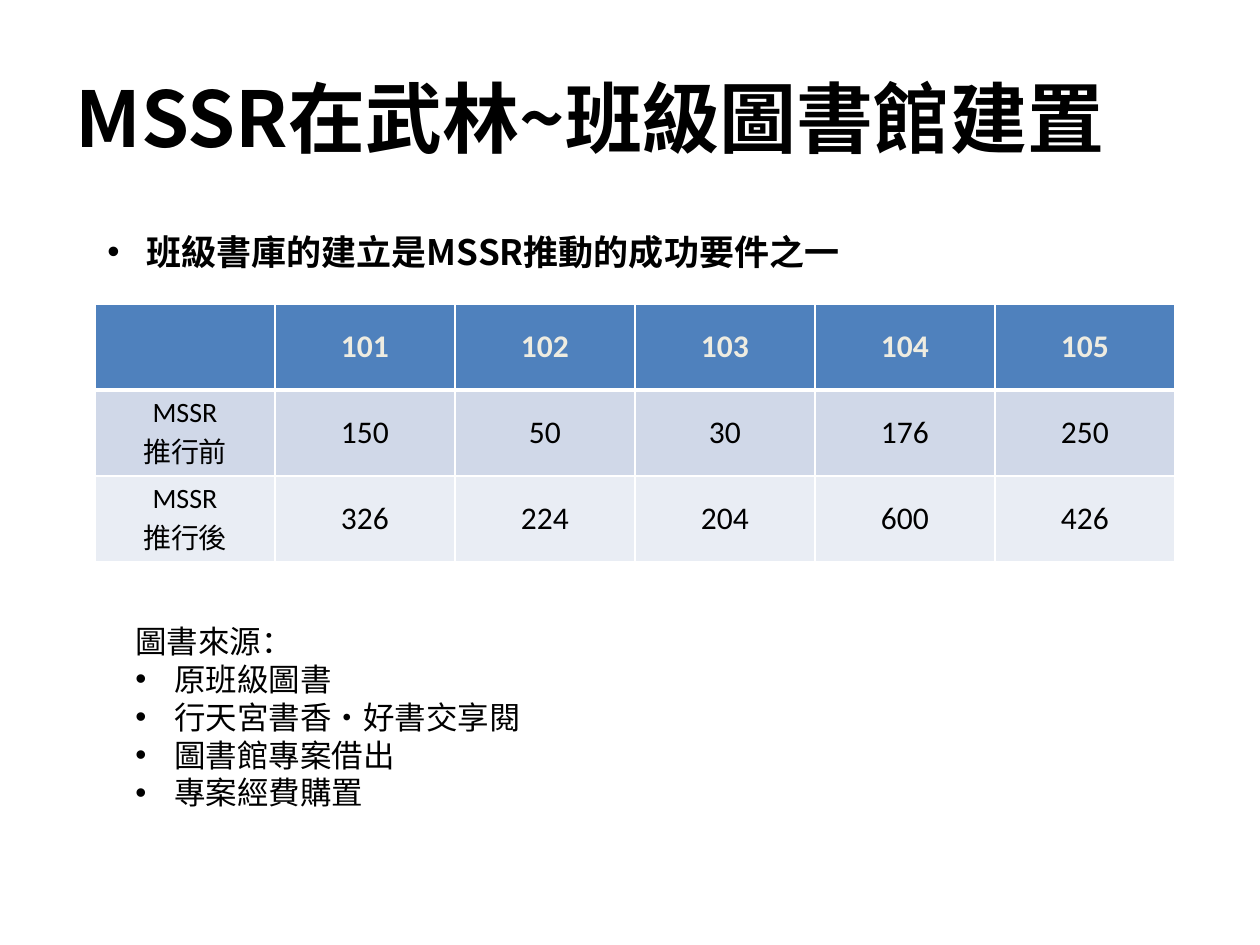
from lxml.etree import SubElement
from pptx import Presentation
from pptx.dml.color import RGBColor
from pptx.enum.text import MSO_ANCHOR, MSO_AUTO_SIZE, PP_ALIGN
from pptx.oxml import parse_xml
from pptx.oxml.ns import nsdecls, qn
from pptx.util import Emu, Pt

COLORS = {
    "ink": "000000",
    "cream": "EEECE1",
    "head": "4F81BD",
    "odd": "D0D8E8",
    "even": "E9EDF4",
    "rule": "FFFFFF",
}
SANS = "Noto Sans CJK SC"
LATIN = "Calibri"
INDENT = 39


def px(n):
    return Emu(round(n * 914400 / 126))


def style(run, size, name=SANS, bold=False, color="ink"):
    font = run.font
    font.size = Pt(size)
    font.bold = bold
    font.name = name
    font.color.rgb = RGBColor.from_string(COLORS[color])
    SubElement(font._element, qn("a:ea")).set("typeface", name)


def bullet(para):
    props = para._p.get_or_add_pPr()
    props.set("marL", str(px(INDENT)))
    props.set("indent", str(-px(INDENT)))
    SubElement(props, qn("a:buFont")).set("typeface", "Arial")
    SubElement(props, qn("a:buChar")).set("char", "•")


def add_text(slide, box, lines, size, bold=False, plain=0, grow=True):
    frame = slide.shapes.add_textbox(*map(px, box)).text_frame
    frame.word_wrap = True
    if grow:
        frame.auto_size = MSO_AUTO_SIZE.SHAPE_TO_FIT_TEXT
    else:
        frame.vertical_anchor = MSO_ANCHOR.MIDDLE
    frame.text = "\n".join(lines)
    for i, para in enumerate(frame.paragraphs):
        if i >= plain:
            bullet(para)
        for run in para.runs:
            style(run, size, bold=bold)


def add_rules(cell, top, base):
    props = cell._tc.get_or_add_tcPr()
    for i, (side, width) in enumerate(zip("LRTB", (1, 1, top, base))):
        props.insert(i, parse_xml(
            f'<a:ln{side} {nsdecls("a")} w="{Pt(width)}"><a:solidFill>'
            f'<a:srgbClr val="{COLORS["rule"]}"/></a:solidFill></a:ln{side}>'))


def add_grid(slide, box, rows):
    count = len(rows[0])
    table = slide.shapes.add_table(len(rows), count, *map(px, box)).table
    for col in table.columns:
        col.width = px(box[2] // count)
    for row in table.rows:
        row.height = px(box[3] // len(rows))
    for r, row in enumerate(rows):
        for c, text in enumerate(row):
            cell = table.cell(r, c)
            label = r > 0 and c == 0
            cell.fill.solid()
            fill = COLORS[("head", "odd", "even")[r]]
            cell.fill.fore_color.rgb = RGBColor.from_string(fill)
            add_rules(cell, 3 if r == 1 else 1, 3 if r == 0 else 1)
            cell.vertical_anchor = MSO_ANCHOR.TOP if label else MSO_ANCHOR.MIDDLE
            para = cell.text_frame.paragraphs[0]
            para.text = text
            para.alignment = PP_ALIGN.CENTER
            for run, name in zip(para.runs, (LATIN, SANS)):
                style(run, 16 if label else 18, name, r == 0,
                      "ink" if r else "cream")


def main():
    deck = Presentation()
    deck.slide_width, deck.slide_height = px(1260), px(945)
    slide = deck.slides.add_slide(deck.slide_layouts[6])
    add_text(slide, (63, 38, 1134, 158), ["MSSR在武林~班級圖書館建置"],
             44, bold=True, plain=1, grow=False)
    add_text(slide, (95, 224, 804, 55),
             ["班級書庫的建立是MSSR推動的成功要件之一"], 20, bold=True)
    add_grid(slide, (95, 304, 1080, 258), [
        ["", "101", "102", "103", "104", "105"],
        ["MSSR\v推行前", "150", "50", "30", "176", "250"],
        ["MSSR\v推行後", "326", "224", "204", "600", "426"],
    ])
    add_text(slide, (123, 616, 456, 204), [
        "圖書來源：", "原班級圖書", "行天宮書香‧好書交享閱",
        "圖書館專案借出", "專案經費購置",
    ], 18, plain=1)
    deck.save("out.pptx")


if __name__ == "__main__":
    main()
